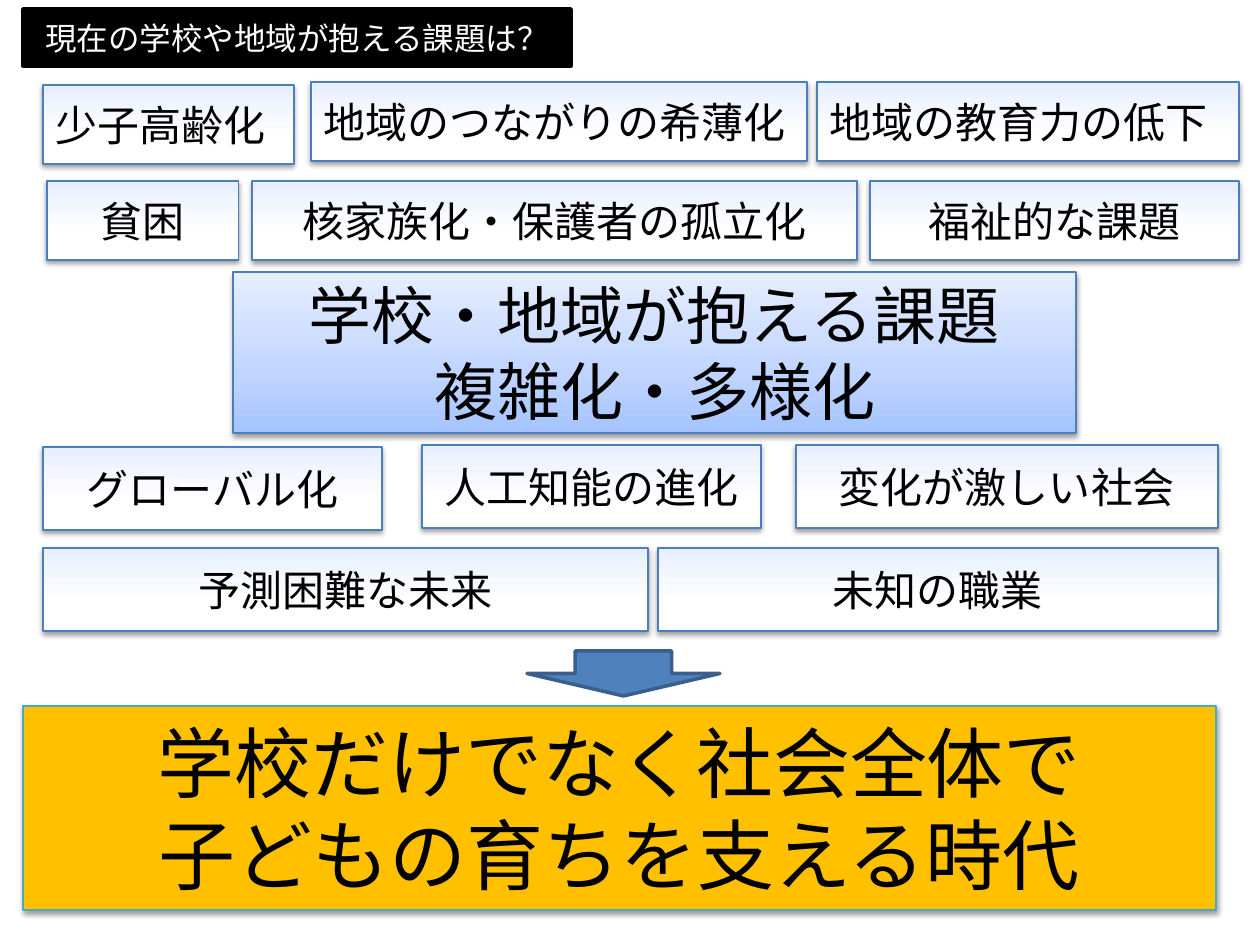
from lxml import etree
from pptx import Presentation, util as u
from pptx.dml.color import RGBColor
from pptx.enum import shapes, text
from pptx.oxml import parse_xml
from pptx.oxml.ns import nsdecls, qn

PX = 914400 // 126
JP_FONT = "Noto Sans CJK JP"
COLORS = {
    "black": "000000", "white": "FFFFFF", "pale": "E6EEFF",
    "sky": "BFD4FF", "blue": "A4C4FF", "box_line": "4B7EBC",
    "gold": "FFC000", "gold_line": "46AAC5",
    "arrow": "4F81BD", "arrow_line": "3A5F8C",
}
ISSUE_GRADIENT = [(0, "white"), (35, "white"), (100, "pale")]
THEME_GRADIENT = [(0, "blue"), (35, "sky"), (100, "pale")]

# top, height, alignment, [(left, width, issue), ...]
ISSUE_ROWS = [
    (82, 79, "LEFT", [(311, 496, "地域のつながりの希薄化"),
                      (817, 422, "地域の教育力の低下")]),
    (85, 79, "LEFT", [(43, 251, "少子高齢化")]),
    (181, 79, "CENTER", [(47, 192, "貧困"),
                         (252, 605, "核家族化・保護者の孤立化"),
                         (870, 369, "福祉的な課題")]),
    (447, 83, "CENTER", [(43, 339, "グローバル化")]),
    (445, 83, "CENTER", [(422, 339, "人工知能の進化"),
                         (796, 422, "変化が激しい社会")]),
    (548, 83, "CENTER", [(43, 605, "予測困難な未来"),
                         (658, 560, "未知の職業")]),
]


def rgb(name):
    return RGBColor.from_string(COLORS[name])


def place(shape, left, top, width, height):
    shape.left, shape.top = left * PX, top * PX
    shape.width, shape.height = width * PX, height * PX


def paint(shape, fill, line, line_width):
    shape.fill.solid()
    shape.fill.fore_color.rgb = rgb(fill)
    shape.line.color.rgb = rgb(line)
    shape.line.width = u.Pt(line_width)


def paint_gradient(shape, stops):
    """Replace the solid fill by a gradient that runs from bottom to top."""
    stop_xml = "".join(
        f'<a:gs pos="{percent * 1000}"><a:srgbClr val="{COLORS[color]}"/></a:gs>'
        for percent, color in stops)
    gradient = parse_xml(
        f'<a:gradFill {nsdecls("a")} rotWithShape="1"><a:gsLst>{stop_xml}</a:gsLst>'
        '<a:lin ang="16200000" scaled="0"/></a:gradFill>')
    properties = shape.element.spPr
    properties.replace(properties.find(qn("a:solidFill")), gradient)


def cast_shadow(shape):
    shape.shadow.inherit = False
    effects = shape.element.spPr.find(qn("a:effectLst"))
    effects.append(parse_xml(
        f'<a:outerShdw {nsdecls("a")} blurRad="{u.Pt(3.1)}" dist="{u.Pt(1.6)}" '
        f'dir="5400000" rotWithShape="0"><a:srgbClr val="{COLORS["black"]}">'
        '<a:alpha val="38000"/></a:srgbClr></a:outerShdw>'))


def write(shape, lines, size, align="CENTER", font=JP_FONT, color="black"):
    frame = shape.text_frame
    frame.word_wrap = True
    frame.auto_size = text.MSO_AUTO_SIZE.NONE
    frame.vertical_anchor = text.MSO_ANCHOR.MIDDLE
    frame.text = "\n".join(lines)
    for paragraph in frame.paragraphs:
        paragraph.alignment = text.PP_ALIGN[align]
        paragraph.font.size = u.Pt(size)
        paragraph.font.name = font
        paragraph.font.color.rgb = rgb(color)
        defaults = paragraph.font._element
        etree.SubElement(defaults, qn("a:ea"), typeface=JP_FONT)


def add_title(slide, title):
    heading = slide.shapes.title
    place(heading, 23, 9, 548, 57)
    heading.element.spPr.append(parse_xml(
        f'<a:prstGeom {nsdecls("a")} prst="roundRect"><a:avLst/></a:prstGeom>'))
    paint(heading, "black", "black", 2)
    write(heading, [title], 18, font="Calibri", color="white")


def add_box(slide, bounds, lines, size, gradient=None, fill="white",
            line="box_line", align="CENTER"):
    box = slide.shapes.add_shape(
        shapes.MSO_SHAPE.RECTANGLE, *(length * PX for length in bounds))
    paint(box, fill, line, 0.75)
    if gradient:
        paint_gradient(box, gradient)
    cast_shadow(box)
    write(box, lines, size, align)


def add_down_arrow(slide, bounds):
    arrow = slide.shapes.add_shape(
        shapes.MSO_SHAPE.DOWN_ARROW, *(length * PX for length in bounds))
    paint(arrow, "arrow", "arrow_line", 2)
    arrow.shadow.inherit = False


def main():
    deck = Presentation()
    deck.slide_width, deck.slide_height = u.Inches(10), u.Inches(7.5)
    slide = deck.slides.add_slide(deck.slide_layouts[5])

    add_title(slide, "現在の学校や地域が抱える課題は？")
    add_box(slide, (233, 272, 843, 161),
            ["学校・地域が抱える課題", "複雑化・多様化"], 36, THEME_GRADIENT)
    add_box(slide, (23, 706, 1193, 204),
            ["学校だけでなく社会全体で", "子どもの育ちを支える時代"], 44,
            fill="gold", line="gold_line")
    add_down_arrow(slide, (527, 651, 193, 45))
    for top, height, align, issues in ISSUE_ROWS:
        for left, width, issue in issues:
            add_box(slide, (left, top, width, height), [issue], 24,
                    ISSUE_GRADIENT, align=align)

    deck.save("out.pptx")


if __name__ == "__main__":
    main()
